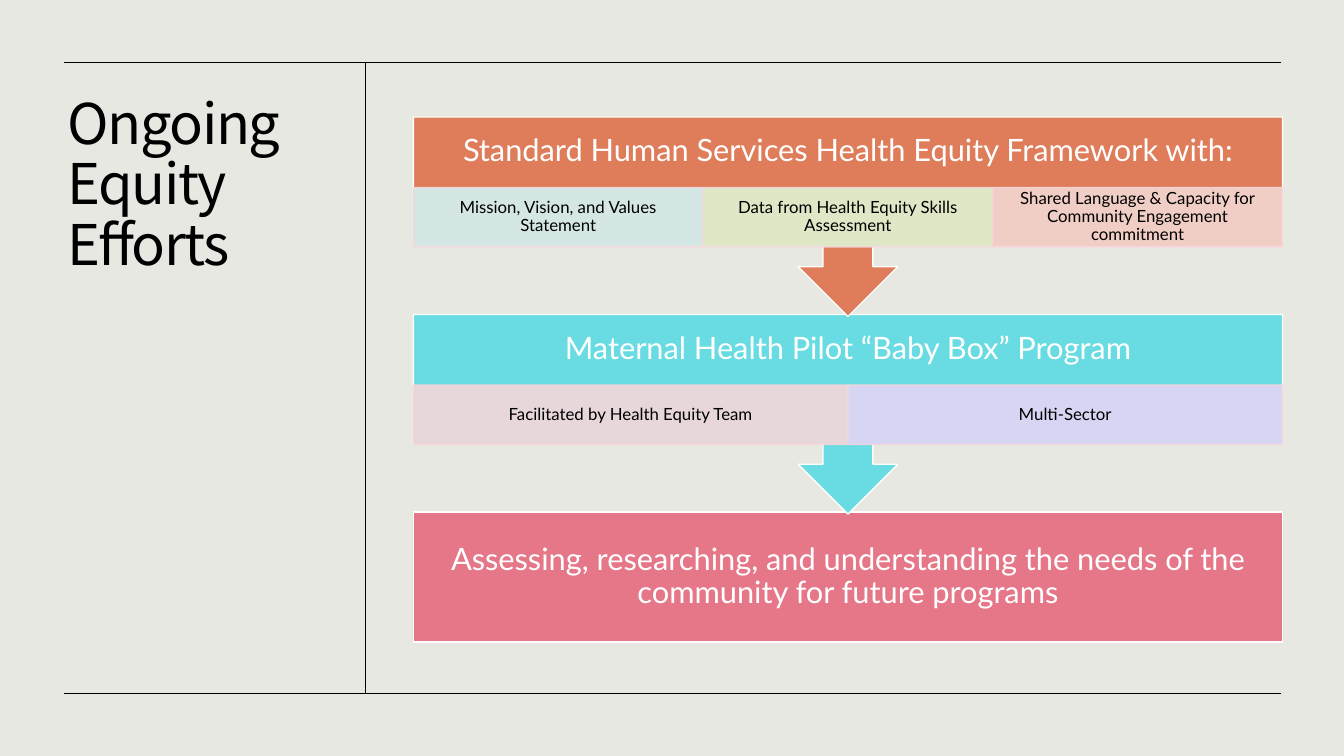
import pptx
import pptx.util
import pptx.dml.color
import pptx.enum.shapes
import pptx.enum.text
import pptx.oxml
import pptx.oxml.ns
import lxml.etree

Inches = pptx.util.Inches
Pt = pptx.util.Pt
SHAPE = pptx.enum.shapes.MSO_SHAPE
ALIGN = pptx.enum.text.PP_ALIGN
ANCHOR = pptx.enum.text.MSO_ANCHOR


def color(value):
    return pptx.dml.color.RGBColor.from_string(value)


def sub(parent, tag, **attrs):
    return lxml.etree.SubElement(parent, pptx.oxml.ns.qn(tag), **attrs)


class Deck:
    BLACK, WHITE, BACKGROUND = "000000", "FFFFFF", "E7E8E2"
    CELL_BORDER = "F5D6DA"
    TITLE_FONT, BODY_FONT = "Noto Sans CJK KR", "Lato"
    LEFT, WIDTH = 4.1, 8.62
    CALLOUT_H, HEADER_H, CELL_H, BOX_H = 1.98, 0.69, 0.59, 1.29

    def __init__(self):
        self.prs = pptx.Presentation()
        self.prs.slide_width = Inches(13.33)
        self.prs.slide_height = Inches(7.5)
        self.s = self.prs.slides.add_slide(self.prs.slide_layouts[6])
        fill = self.s.background.fill
        fill.solid()
        fill.fore_color.rgb = color(self.BACKGROUND)

    def text(self, sp, text, size, fill, font, inset, anchor, align):
        tf = sp.text_frame
        tf.word_wrap = True
        tf.vertical_anchor = anchor
        tf.margin_left = tf.margin_right = Inches(inset[0])
        tf.margin_top = tf.margin_bottom = Inches(inset[1])
        tf.text = text
        p = tf.paragraphs[0]
        p.alignment = align
        p.line_spacing = 0.9
        r = p.runs[0]
        r.font.size = Pt(size)
        r.font.name = font
        r.font.color.rgb = color(fill)
        return r

    def title(self, text):
        sp = self.s.shapes.add_textbox(
            Inches(0.57), Inches(0.9), Inches(2.72), Inches(5.79))
        r = self.text(sp, text, 40, self.BLACK, self.TITLE_FONT,
                      (0.1, 0.05), ANCHOR.TOP, ALIGN.LEFT)
        rpr = r.font._element
        rpr.set("spc", "-100")
        sub(rpr, "a:ea", typeface=self.TITLE_FONT)

    def heading(self, sp, text):
        self.text(sp, text, 22, self.WHITE, self.BODY_FONT,
                  (0.17, 0.17), ANCHOR.MIDDLE, ALIGN.CENTER)

    def rule(self, x1, y1, x2, y2):
        line = self.s.shapes.add_connector(
            pptx.enum.shapes.MSO_CONNECTOR.STRAIGHT,
            Inches(x1), Inches(y1), Inches(x2), Inches(y2))
        line.line.color.rgb = color(self.BLACK)
        line.line.width = Pt(0.5)
        sub(line._element.spPr, "a:effectLst")

    def shape(self, kind, x, y, w, h, fill, border, alpha=100):
        sp = self.s.shapes.add_shape(
            kind, Inches(x), Inches(y), Inches(w), Inches(h))
        sp.shadow.inherit = False
        sp.fill.solid()
        sp.fill.fore_color.rgb = color(fill)
        sp.line.color.rgb = color(border)
        sp.line.width = Pt(1)
        if alpha < 100:
            for clr in sp._element.spPr.iter(pptx.oxml.ns.qn("a:srgbClr")):
                sub(clr, "a:alpha", val=str(alpha * 1000))
        return sp

    def box(self, y, text, fill):
        sp = self.shape(SHAPE.RECTANGLE, self.LEFT, y, self.WIDTH,
                        self.BOX_H, fill, self.WHITE)
        self.heading(sp, text)

    def callout(self, y, text, fill, cells):
        sp = self.shape(SHAPE.UP_ARROW_CALLOUT, self.LEFT, y, self.WIDTH,
                        self.CALLOUT_H, fill, self.WHITE)
        sp.rotation = 180
        sp.adjustments[3] = 0.65
        label = self.s.shapes.add_textbox(
            Inches(self.LEFT), Inches(y), Inches(self.WIDTH),
            Inches(self.HEADER_H))
        self.heading(label, text)
        w = self.WIDTH / len(cells)
        for i, (cell_text, cell_fill) in enumerate(cells):
            cell = self.shape(SHAPE.RECTANGLE, self.LEFT + i * w, y + 0.7, w,
                              self.CELL_H, cell_fill, self.CELL_BORDER, 90)
            self.text(cell, cell_text, 12, self.BLACK, self.BODY_FONT,
                      (0.09, 0.02), ANCHOR.MIDDLE, ALIGN.CENTER)


def main():
    deck = Deck()
    deck.title("Ongoing Equity Efforts")
    left, right, top, bottom, divider = 0.63, 12.71, 0.62, 6.88, 3.62
    deck.rule(left, bottom, right, bottom)
    deck.rule(divider, top, divider, bottom)
    deck.rule(left, top, right, top)

    deck.box(5.08, "Assessing, researching, and understanding the needs of "
             "the community for future programs", "E57789")
    deck.callout(3.12, "Maternal Health Pilot “Baby Box” Program", "68DCE2", [
        ("Facilitated by Health Equity Team", "F5D6DA"),
        ("Multi-Sector", "E3D5F5"),
    ])
    deck.callout(
        1.16, "Standard Human Services Health Equity Framework with:",
        "DF7C59", [
            ("Mission, Vision, and Values Statement", "D4F3F4"),
            ("Data from Health Equity Skills Assessment", "E0F3D3"),
            ("Shared Language & Capacity for Community Engagement commitment",
             "F3D7D1"),
        ])
    deck.prs.save("out.pptx")


if __name__ == "__main__":
    main()
